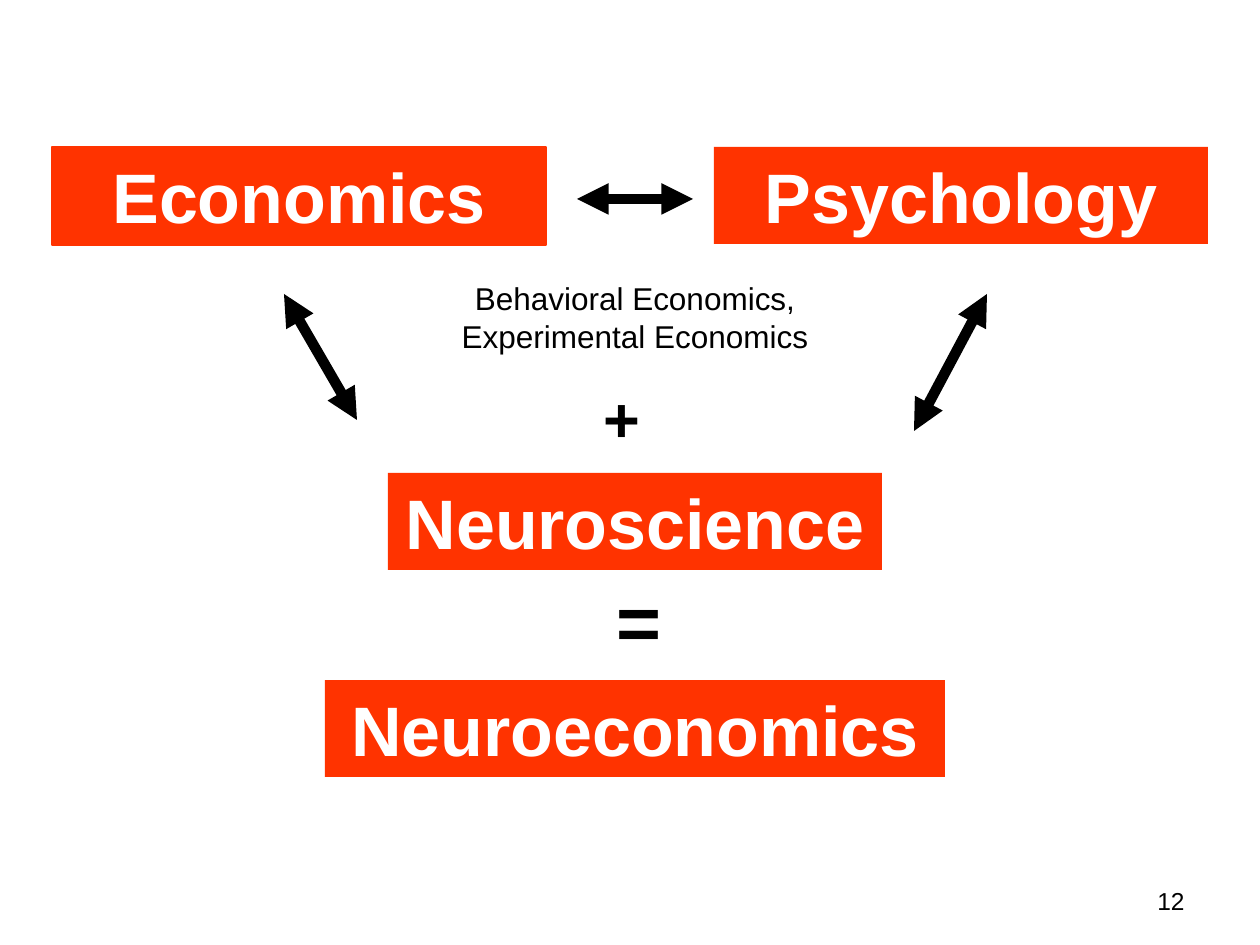
from dataclasses import dataclass

from lxml import etree
from pptx import Presentation
from pptx.dml.color import RGBColor
from pptx.enum.shapes import MSO_CONNECTOR, MSO_SHAPE
from pptx.enum.text import MSO_ANCHOR, PP_ALIGN
from pptx.oxml.ns import qn
from pptx.util import Emu, Pt

STRAIGHT = MSO_CONNECTOR.STRAIGHT
RECTANGLE = MSO_SHAPE.RECTANGLE
TOP, MIDDLE = MSO_ANCHOR.TOP, MSO_ANCHOR.MIDDLE
LEFT, CENTER, RIGHT = PP_ALIGN.LEFT, PP_ALIGN.CENTER, PP_ALIGN.RIGHT
PX_PER_INCH = 126


@dataclass(frozen=True)
class Theme:
    font: str = "Arial"
    field: RGBColor = RGBColor(0xFF, 0x33, 0x00)
    field_text: RGBColor = RGBColor(0xFF, 0xFF, 0xFF)
    ink: RGBColor = RGBColor(0x00, 0x00, 0x00)
    field_size: int = 40
    equals_size: int = 44
    plus_size: int = 36
    note_size: int = 18
    number_size: int = 14
    arrow_width: int = 6
    border_width: float = 0.75


THEME = Theme()


def px(length):
    return Emu(round(length * 914400 / PX_PER_INCH))


def write_text(shape, text, *, size, color=THEME.ink, bold=False,
               align=LEFT, anchor=TOP):
    frame = shape.text_frame
    frame.word_wrap = True
    frame.vertical_anchor = anchor
    para = frame.paragraphs[0]
    para.alignment = align
    span = para.add_run()
    span.text = text
    span.font.name = THEME.font
    span.font.size = Pt(size)
    span.font.bold = bold
    span.font.color.rgb = color


def add_field(page, text, left, top, width, height=97, border=False):
    box = page.shapes.add_shape(RECTANGLE, px(left), px(top), px(width), px(height))
    box.shadow.inherit = False
    box.fill.solid()
    box.fill.fore_color.rgb = THEME.field
    if border:
        box.line.color.rgb = THEME.field
        box.line.width = Pt(THEME.border_width)
    else:
        box.line.fill.background()
    write_text(box, text, size=THEME.field_size, color=THEME.field_text,
               bold=True, align=CENTER)


def add_label(page, text, left, top, width, height, **text_format):
    box = page.shapes.add_textbox(px(left), px(top), px(width), px(height))
    write_text(box, text, **text_format)


def add_double_arrow(page, start, end):
    arrow = page.shapes.add_connector(STRAIGHT, *map(px, start + end))
    arrow.line.color.rgb = THEME.ink
    arrow.line.width = Pt(THEME.arrow_width)
    outline = arrow.line._get_or_add_ln()
    for tip in ("a:headEnd", "a:tailEnd"):
        etree.SubElement(outline, qn(tip), type="triangle")
    etree.SubElement(arrow._element.spPr, qn("a:effectLst"))


def main():
    deck = Presentation()
    deck.slide_width, deck.slide_height = px(1260), px(945)
    page = deck.slides.add_slide(deck.slide_layouts[6])

    add_field(page, "Economics", 52, 147, 494, 98, border=True)
    add_field(page, "Psychology", 714, 147, 494)
    add_field(page, "Neuroscience", 388, 473, 494)
    add_field(page, "Neuroeconomics", 325, 680, 620)

    add_double_arrow(page, (577, 199), (693, 199))
    add_double_arrow(page, (284, 294), (357, 420))
    add_double_arrow(page, (987, 294), (914, 431))

    add_label(page, "Behavioral Economics, Experimental Economics",
              441, 273, 388, 88, size=THEME.note_size, align=CENTER)
    add_label(page, "+", 591, 373, 62, 88, size=THEME.plus_size, bold=True)
    add_label(page, "=", 604, 567, 63, 105, size=THEME.equals_size, bold=True)
    add_label(page, "12", 903, 876, 294, 50, size=THEME.number_size,
              align=RIGHT, anchor=MIDDLE)

    deck.save("out.pptx")


if __name__ == "__main__":
    main()
